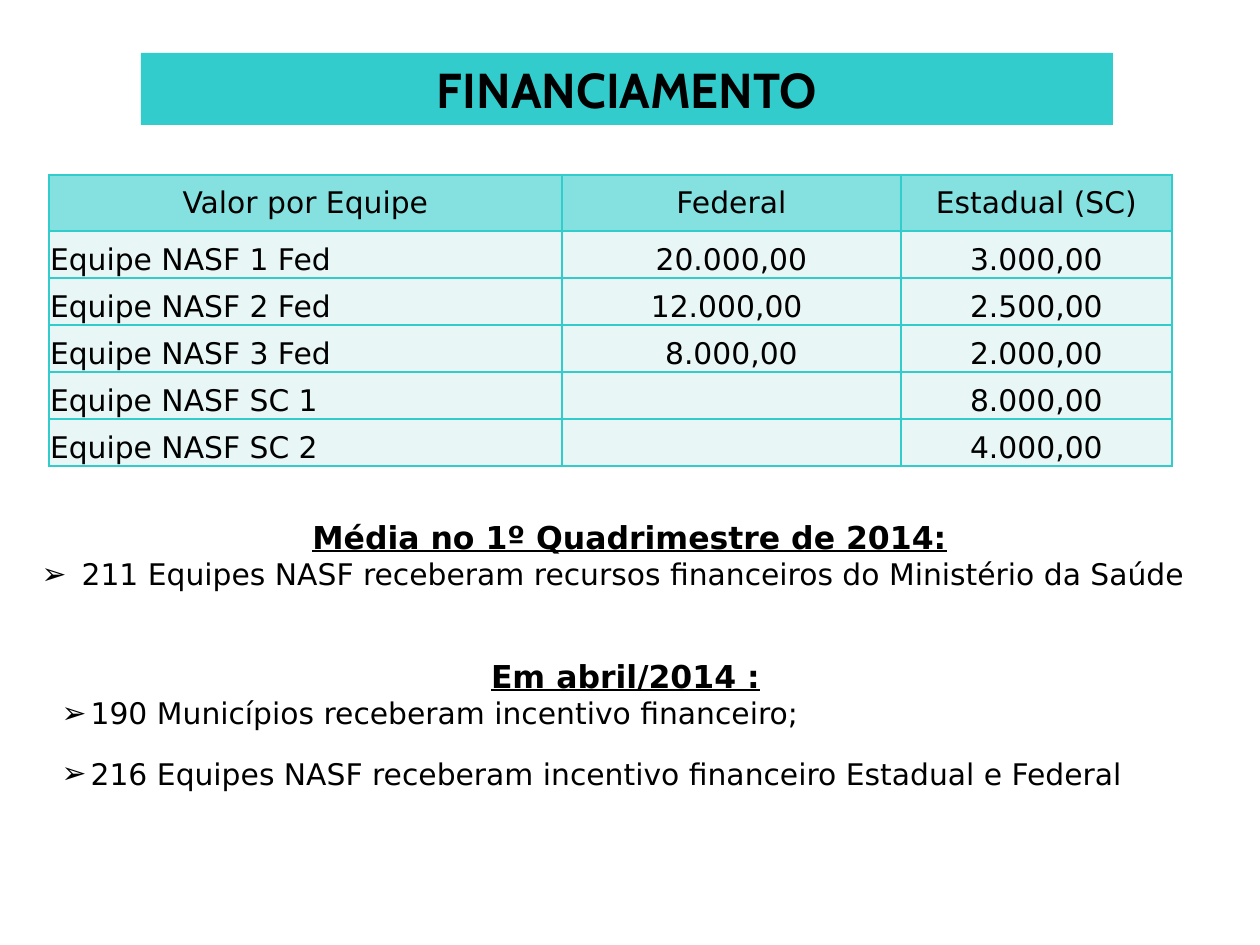
"""Build the FINANCIAMENTO slide: a funding table and two short lists."""
import pptx
import pptx.dml.color
import pptx.enum.text
import pptx.oxml
import pptx.oxml.ns
import pptx.util
from lxml import etree

SCALE = 914400 / 126
COLORS = {"teal": "33CCCC", "header": "85E0E0", "row": "E8F6F6", "text": "000000"}
FONT = "DejaVu Sans"
ALIGN = pptx.enum.text.PP_ALIGN
ANCHOR = pptx.enum.text.MSO_ANCHOR
qn = pptx.oxml.ns.qn


def px(length):
    """Turn pixels into EMU."""
    return pptx.util.Emu(round(length * SCALE))


def format_runs(para, size, font=FONT, bold=False, underline=False):
    """Apply one character style to every run of a paragraph."""
    for run in para.runs:
        run.font.name = font
        run.font.size = pptx.util.Pt(size)
        run.font.bold = bold
        run.font.underline = underline
        run.font.color.rgb = pptx.dml.color.RGBColor.from_string(COLORS["text"])


deck = pptx.Presentation()
deck.slide_width, deck.slide_height = px(1260), px(945)
page = deck.slides.add_slide(deck.slide_layouts.get_by_name("Two Content"))
title, *bodies = page.placeholders

title.left, title.top, title.width, title.height = px(141), px(53), px(972), px(72)
title.fill.solid()
title.fill.fore_color.rgb = pptx.dml.color.RGBColor.from_string(COLORS["teal"])
title.text_frame.text = "FINANCIAMENTO"
title.text_frame.auto_size = pptx.enum.text.MSO_AUTO_SIZE.NONE
title.text_frame.vertical_anchor = ANCHOR.MIDDLE
title.text_frame.paragraphs[0].alignment = ALIGN.CENTER
format_runs(title.text_frame.paragraphs[0], 28, "Cabin", bold=True)

rows = [
    ("Valor por Equipe", "Federal", "Estadual (SC)"),
    ("Equipe NASF 1 Fed", "20.000,00", "3.000,00"),
    ("Equipe NASF 2 Fed", "12.000,00 ", "2.500,00"),
    ("Equipe NASF 3 Fed", "8.000,00", "2.000,00"),
    ("Equipe NASF SC 1", "", "8.000,00"),
    ("Equipe NASF SC 2", "", "4.000,00"),
]
widths = [513, 339, 271]
heights = [56] + [47] * 5
table = page.shapes.add_table(
    len(rows), len(widths), px(49), px(175), px(sum(widths)), px(sum(heights))
).table
for column, width in zip(table.columns, widths):
    column.width = px(width)
for row_index, (values, height) in enumerate(zip(rows, heights)):
    table.rows[row_index].height = px(height)
    is_header = row_index == 0
    for column_index, value in enumerate(values):
        cell = table.cell(row_index, column_index)
        cell.text_frame.text = value
        cell.margin_left = cell.margin_right = cell.margin_top = px(1)
        cell.margin_bottom = 0
        cell.vertical_anchor = ANCHOR.MIDDLE if is_header else ANCHOR.BOTTOM
        para = cell.text_frame.paragraphs[0]
        para.alignment = ALIGN.CENTER if is_header or column_index else ALIGN.LEFT
        format_runs(para, 17)
        properties = cell._tc.get_or_add_tcPr()
        for side in ("lnL", "lnR", "lnT", "lnB"):
            border = etree.SubElement(properties, qn(f"a:{side}"), w="12700")
            fill = etree.SubElement(border, qn("a:solidFill"))
            etree.SubElement(fill, qn("a:srgbClr"), val=COLORS["teal"])
        cell.fill.solid()
        cell.fill.fore_color.rgb = pptx.dml.color.RGBColor.from_string(
            COLORS["header" if is_header else "row"]
        )

lists = [
    ((29, 512, 1201, 127), 40, "Média no 1º Quadrimestre de 2014:",
     ["211 Equipes NASF receberam recursos financeiros do Ministério da Saúde"]),
    ((49, 651, 1153, 186), 29, "Em abril/2014 :",
     ["190 Municípios receberam incentivo financeiro;",
      "216 Equipes NASF receberam incentivo financeiro Estadual e Federal"]),
]
for body, (place, indent, heading, items) in zip(bodies, lists):
    body.left, body.top, body.width, body.height = map(px, place)
    frame = body.text_frame
    frame.text = "\n".join([heading, *items])
    frame.auto_size = pptx.enum.text.MSO_AUTO_SIZE.NONE
    frame.vertical_anchor = ANCHOR.TOP
    for position, para in enumerate(frame.paragraphs):
        is_heading = position == 0
        properties = para._p.get_or_add_pPr()
        margin = 0 if is_heading else px(indent)
        properties.set("marL", str(margin))
        properties.set("indent", str(-margin))
        if is_heading:
            etree.SubElement(properties, qn("a:buNone"))
        else:
            etree.SubElement(properties, qn("a:buFont"), typeface=FONT)
            etree.SubElement(properties, qn("a:buChar"), char="➢")
        para.alignment = ALIGN.CENTER if is_heading else ALIGN.LEFT
        para.space_before = pptx.util.Pt(14 if position > 1 else 0)
        format_runs(para, 18 if is_heading else 17, bold=is_heading, underline=is_heading)

deck.save("out.pptx")
